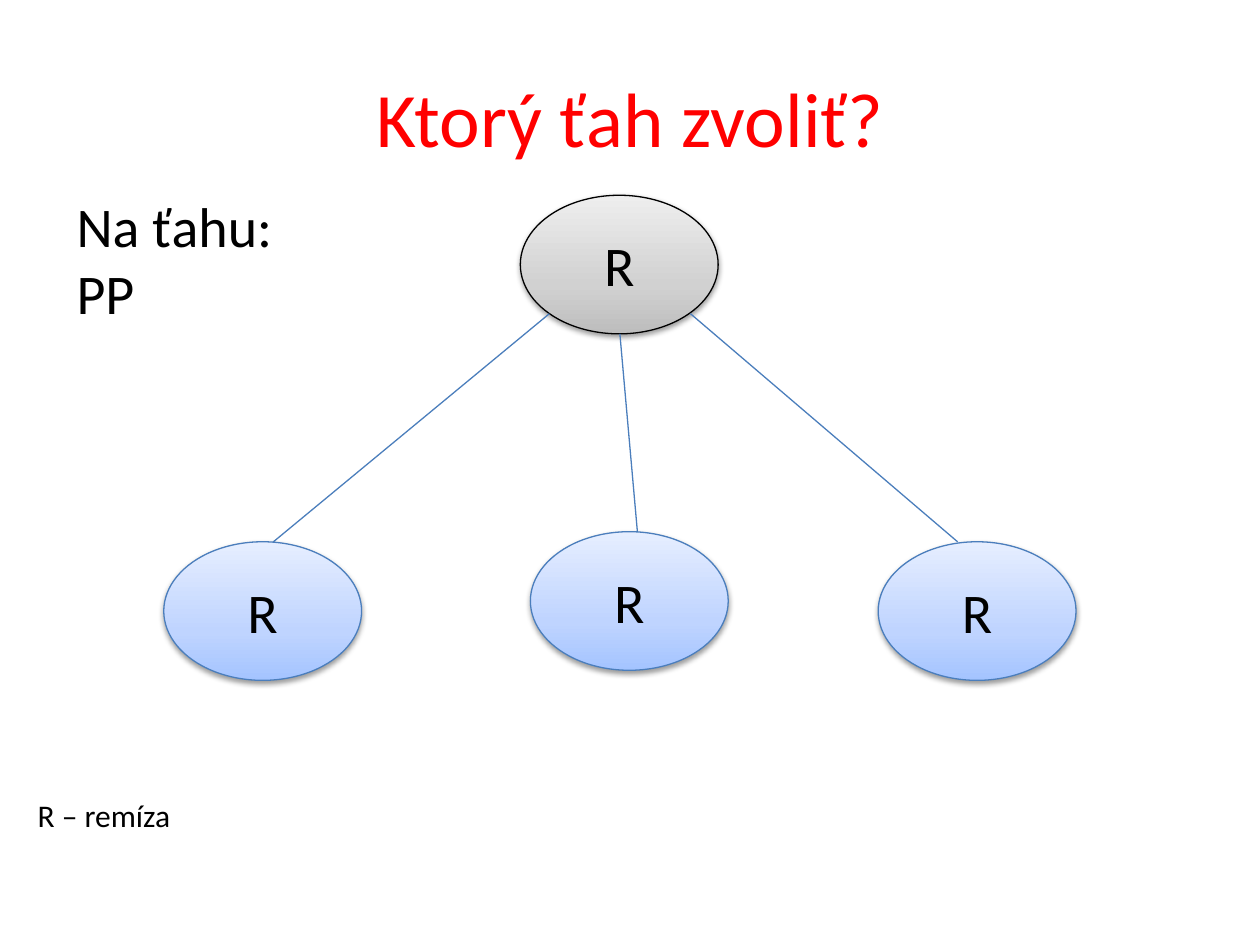
import copy

import lxml.etree
import pptx
import pptx.dml.color
import pptx.enum.shapes
import pptx.enum.text
import pptx.oxml.ns
import pptx.util

PX = 9144
FONT = "Calibri"
RED = pptx.dml.color.RGBColor(0xFF, 0x00, 0x00)
BLACK = pptx.dml.color.RGBColor(0x00, 0x00, 0x00)
BLUE = pptx.dml.color.RGBColor(0x4B, 0x7E, 0xBC)
GREY_SHADES = (
    pptx.dml.color.RGBColor(0xBD, 0xBD, 0xBD),
    pptx.dml.color.RGBColor(0xD1, 0xD1, 0xD1),
    pptx.dml.color.RGBColor(0xEE, 0xEE, 0xEE),
)
BLUE_SHADES = (
    pptx.dml.color.RGBColor(0xA4, 0xC4, 0xFF),
    pptx.dml.color.RGBColor(0xBF, 0xD4, 0xFF),
    pptx.dml.color.RGBColor(0xE6, 0xEE, 0xFF),
)
SHADE_POSITIONS = (0, 0.35, 1)
NODE_W, NODE_H = 157, 110


def emu(*lengths):
    """Turn px lengths into EMU."""
    return [pptx.util.Emu(length * PX) for length in lengths]


def write(frame, text, size, color, align, anchor):
    """Put one styled paragraph into a text frame."""
    frame.word_wrap = True
    frame.vertical_anchor = anchor
    paragraph = frame.paragraphs[0]
    paragraph.text = text
    paragraph.alignment = align
    paragraph.font.name = FONT
    paragraph.font.size = pptx.util.Pt(size)
    paragraph.font.color.rgb = color


def add_title(slide, box, text):
    """Move and format the title placeholder."""
    title = slide.shapes.title
    title.left, title.top, title.width, title.height = emu(*box)
    write(title.text_frame, text, 44, RED, pptx.enum.text.PP_ALIGN.CENTER,
          pptx.enum.text.MSO_ANCHOR.MIDDLE)


def add_label(slide, box, text, size):
    """Add a left-aligned text box."""
    label = slide.shapes.add_textbox(*emu(*box))
    write(label.text_frame, text, size, BLACK, pptx.enum.text.PP_ALIGN.LEFT,
          pptx.enum.text.MSO_ANCHOR.TOP)
    label.text_frame.auto_size = pptx.enum.text.MSO_AUTO_SIZE.SHAPE_TO_FIT_TEXT


def shade(node, colors):
    """Fill a node with a three-stop gradient, the first colour at the bottom."""
    node.fill.gradient()
    node.fill.gradient_angle = 90
    first_stop = node.element.spPr.find(".//" + pptx.oxml.ns.qn("a:gs"))
    first_stop.addnext(copy.deepcopy(first_stop))
    for stop, position, color in zip(node.fill.gradient_stops, SHADE_POSITIONS, colors):
        stop.position = position
        stop.color.rgb = color


def cast_shadow(node):
    """Give a node a soft shadow straight below it."""
    qn = pptx.oxml.ns.qn
    node.shadow.inherit = False
    effects = node.element.spPr.find(qn("a:effectLst"))
    shadow = lxml.etree.SubElement(effects, qn("a:outerShdw"), blurRad="40000",
                                   dist="20000", dir="5400000", rotWithShape="0")
    color = lxml.etree.SubElement(shadow, qn("a:srgbClr"), val="000000")
    lxml.etree.SubElement(color, qn("a:alpha"), val="38000")


def add_node(slide, left, top, text, shades, outline):
    """Add one game position as a shaded ellipse."""
    node = slide.shapes.add_shape(pptx.enum.shapes.MSO_SHAPE.OVAL,
                                  *emu(left, top, NODE_W, NODE_H))
    shade(node, shades)
    node.line.color.rgb = outline
    node.line.width = pptx.util.Pt(0.75)
    cast_shadow(node)
    write(node.text_frame, text, 32, BLACK, pptx.enum.text.PP_ALIGN.CENTER,
          pptx.enum.text.MSO_ANCHOR.MIDDLE)


def add_branch(slide, start, end):
    """Add the line of one move."""
    branch = slide.shapes.add_connector(pptx.enum.shapes.MSO_CONNECTOR.STRAIGHT,
                                        *emu(*start, *end))
    branch.line.color.rgb = BLUE
    branch.line.width = pptx.util.Pt(0.75)
    lxml.etree.SubElement(branch.element.spPr, pptx.oxml.ns.qn("a:effectLst"))


def add_game_tree(slide, left, top):
    """Add the root position, its three moves and the positions they lead to."""
    add_node(slide, left + 283, top, "R", GREY_SHADES, BLACK)
    branches = (((306, 94), (87, 275)), ((418, 94), (630, 275)), ((362, 110), (378, 291)))
    for (x1, y1), (x2, y2) in branches:
        add_branch(slide, (left + x1, top + y1), (left + x2, top + y2))
    for x, y in ((0, 275), (291, 267), (567, 275)):
        add_node(slide, left + x, top + y, "R", BLUE_SHADES, BLUE)


def main():
    """Build and save the slide."""
    deck = pptx.Presentation()
    deck.slide_width, deck.slide_height = emu(1000, 750)
    slide = deck.slides.add_slide(deck.slide_layouts[5])
    add_title(slide, (50, 30, 900, 125), "Ktorý ťah zvoliť?")
    add_game_tree(slide, 130, 155)
    add_label(slide, (20, 627, 181, 40), "R – remíza", 18)
    add_label(slide, (51, 147, 197, 118), "Na ťahu: PP", 32)
    deck.save("out.pptx")


if __name__ == "__main__":
    main()
